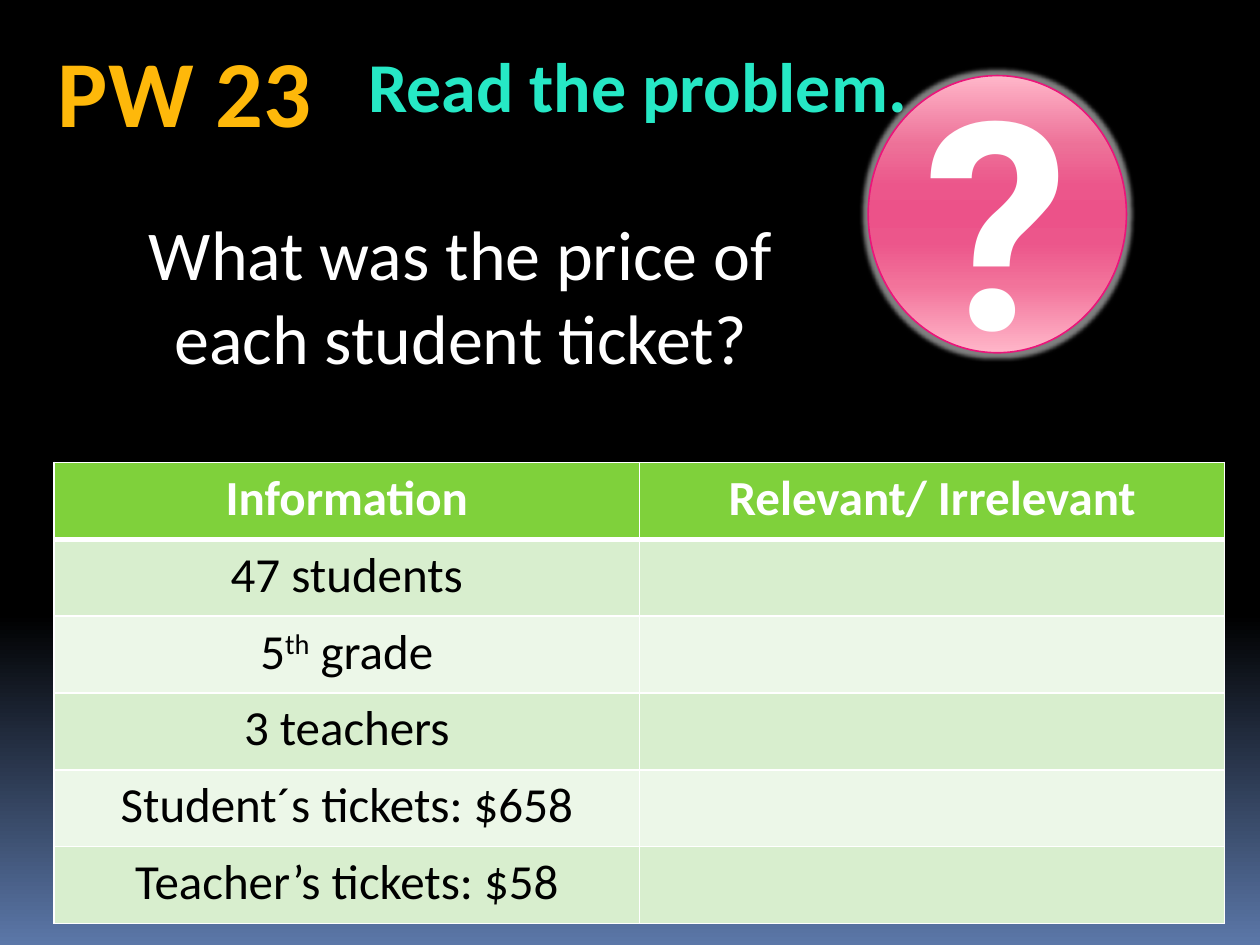
from lxml import etree
from pptx import Presentation
from pptx import util as u
from pptx.dml.color import RGBColor
from pptx.enum import shapes, text
from pptx.oxml.ns import qn

# Content
LABEL = "PW 23"
TITLE = "Read the problem."
QUESTION = "What was the price of each student ticket?"
HEADERS = ["Information", "Relevant/ Irrelevant"]
FACTS = [  # each fact is a list of (text, is superscript)
    [("47 students", False)],
    [("5", False), ("th", True), (" grade", False)],
    [("3 teachers", False)],
    [("Student´s tickets: $658", False)],
    [("Teacher’s tickets: $58", False)],
]

# Look
FONT = "Calibri"
WHITE, BLACK, GREEN = "FFFFFF", "000000", "7FD13B"
BANDS = ["D8EECE", "ECF7E8"]
BACKGROUND = [(0, BLACK), (65, BLACK), (100, "5B77A8")]
PINKS = [(0, "FFB6C9"), (25, "ED7198"), (40, "EC568B"), (50, "EC5289"),
         (60, "EC568B"), (75, "F2729A"), (100, "FFB6C9")]


def rgb(value):
    return RGBColor.from_string(value)


def sub(parent, tag, **attrs):
    return etree.SubElement(parent, qn(tag), {k: str(v) for k, v in attrs.items()})


def style(r, size, color, bold=False, font=FONT):
    r.font.size, r.font.bold, r.font.name = u.Pt(size), bold, font
    r.font.color.rgb = rgb(color)


def set_gradient(fill, owner, stops):
    """Fill from top to bottom with (percent, colour) stops."""
    fill.gradient()
    grad = owner.find(".//" + qn("a:gradFill"))
    for child in list(grad):
        grad.remove(child)
    stop_list = sub(grad, "a:gsLst")
    for percent, color in stops:
        stop = sub(stop_list, "a:gs", pos=percent * 1000)
        sub(stop, "a:srgbClr", val=color)
    sub(grad, "a:lin", ang=90 * 60000, scaled=0)


def write(sp, words, size, color, bold=False, wrap=False, font=FONT):
    tf = sp.text_frame
    tf.text, tf.word_wrap = words, wrap
    tf.vertical_anchor = text.MSO_ANCHOR.TOP
    p = tf.paragraphs[0]
    p.alignment = text.PP_ALIGN.CENTER
    style(p.runs[0], size, color, bold, font)


def paint_cell(cell, fill, bottom=1):
    props = cell._tc.get_or_add_tcPr()
    for side, width in zip("LRTB", (1, 1, 1, bottom)):
        line = sub(props, "a:ln" + side, w=u.Pt(width))
        sub(sub(line, "a:solidFill"), "a:srgbClr", val=WHITE)
    cell.fill.solid()
    cell.fill.fore_color.rgb = rgb(fill)


def fill_cell(cell, parts, color, bold=False):
    p = cell.text_frame.paragraphs[0]
    p.alignment = text.PP_ALIGN.CENTER
    for words, raised in parts:
        r = p.add_run()
        r.text = words
        style(r, 28, color, bold)
        if raised:
            r.font._element.set("baseline", "30000")


def box(*lengths):
    return [u.Inches(n) for n in lengths]


prs = Presentation()
prs.slide_width, prs.slide_height = box(10, 7.5)
s = prs.slides.add_slide(prs.slide_layouts[5])
set_gradient(s.background.fill, s.element, BACKGROUND)

# Title, label and question
title = s.shapes.title
title.left, title.top, title.width, title.height = box(2.72, 0.29, 4.68, 0.77)
write(title, TITLE, 40, "26E8C5", bold=True)
label = s.shapes.add_textbox(*box(0.35, 0.21, 2.23, 1.01))
write(label, LABEL, 54, "FEB80A", bold=True)
question = s.shapes.add_textbox(*box(0.98, 1.62, 5.35, 1.45))
write(question, QUESTION, 40, WHITE, wrap=True)

# Table of facts, with an empty column for the answers
table = s.shapes.add_table(len(FACTS) + 1, len(HEADERS),
                           *box(0.43, 3.67, 9.29, 3.66)).table
for cell, words in zip(table.rows[0].cells, HEADERS):
    paint_cell(cell, GREEN, bottom=3)
    fill_cell(cell, [(words, False)], WHITE, bold=True)
for i, fact in enumerate(FACTS):
    cells = table.rows[i + 1].cells
    for cell in cells:
        paint_cell(cell, BANDS[i % 2])
    fill_cell(cells[0], fact, BLACK)

# Question mark badge with a soft glow
badge = s.shapes.add_shape(shapes.MSO_SHAPE.OVAL, *box(6.89, 0.6, 2.05, 2.2))
set_gradient(badge.fill, badge.element, PINKS)
badge.line.color.rgb = rgb("EA157A")
badge.line.width = u.Pt(0.94)
badge.shadow.inherit = False
glow = sub(badge.element.spPr.find(qn("a:effectLst")), "a:glow", rad=u.Pt(5))
sub(sub(glow, "a:srgbClr", val=WHITE), "a:alpha", val=50000)
write(badge, "?", 166, WHITE, bold=True, font="Roboto")
badge.text_frame.vertical_anchor = text.MSO_ANCHOR.MIDDLE

prs.save("out.pptx")
